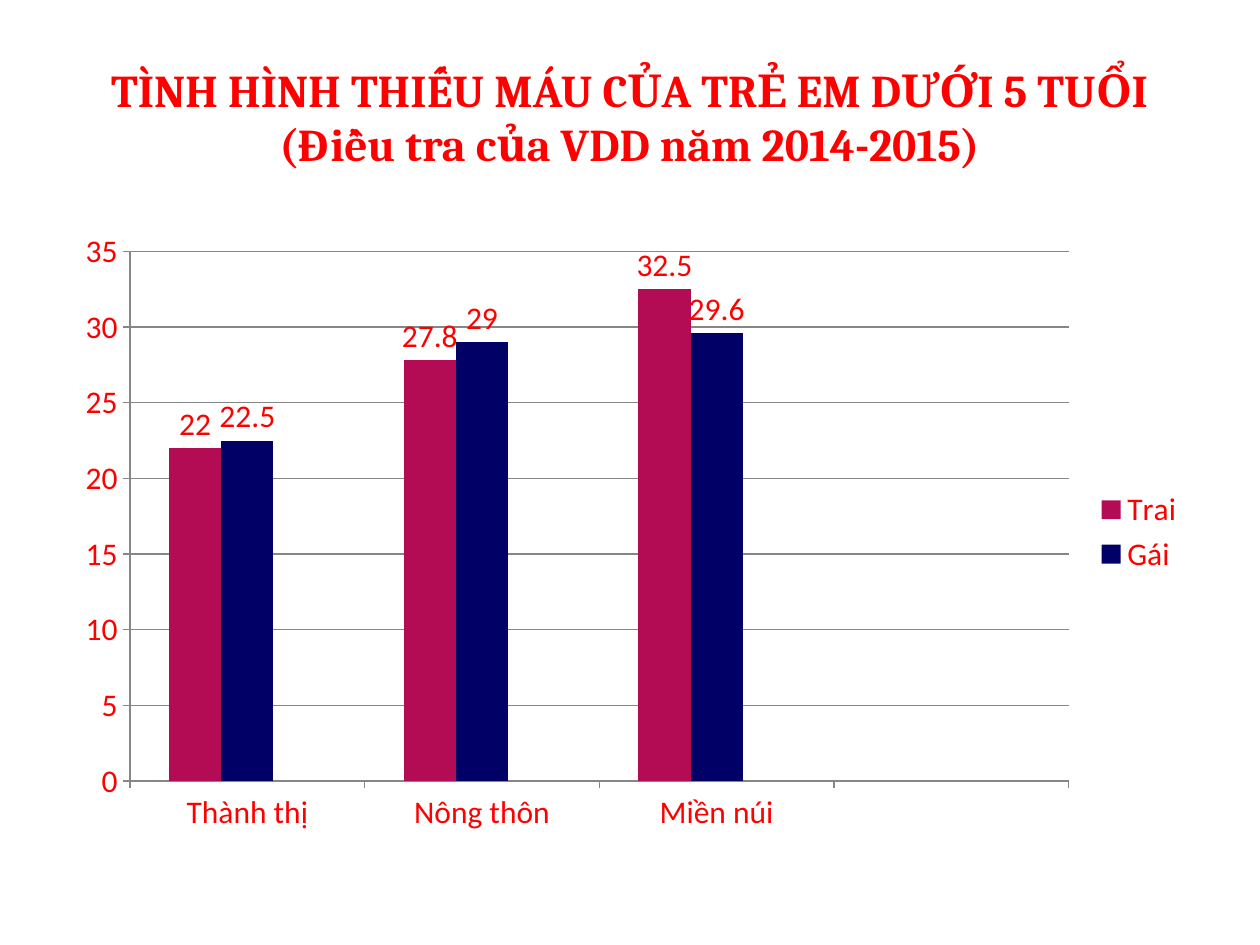
from lxml import etree
from pptx import Presentation
from pptx.chart.data import CategoryChartData
from pptx.dml.color import RGBColor
from pptx.enum.chart import (XL_CHART_TYPE, XL_LABEL_POSITION,
                             XL_LEGEND_POSITION, XL_TICK_MARK)
from pptx.enum.text import MSO_ANCHOR, PP_ALIGN
from pptx.oxml.ns import qn
from pptx.util import Emu, Pt

RED = RGBColor(0xFF, 0x00, 0x00)
CRIMSON = RGBColor(0xB4, 0x0C, 0x54)
NAVY = RGBColor(0x00, 0x00, 0x66)
GREEN = RGBColor(0x9B, 0xBB, 0x59)
GREY = RGBColor(0x86, 0x86, 0x86)
WHITE = RGBColor(0xFF, 0xFF, 0xFF)

TITLE_ONLY = 5
PX_PER_INCH = 126


def px(length):
    return Emu(round(length * 914400 / PX_PER_INCH))


def style_font(font, *, name, size, color, bold=False):
    font.name = name
    font.size = Pt(size)
    font.bold = bold
    font.color.rgb = color


def write_text(frame, text, *, align=PP_ALIGN.CENTER, **font_format):
    """Write one paragraph; newlines become line breaks."""
    para = frame.paragraphs[0]
    para.alignment = align
    for number, line in enumerate(text.split("\n")):
        if number:
            para.add_line_break()
        span = para.add_run()
        span.text = line
        style_font(span.font, **font_format)


class SlideBuilder:
    title_format = dict(name="Cambria", size=26, color=RED, bold=True)
    chart_format = dict(name="Calibri", size=18, color=RED)

    def __init__(self, deck):
        self.page = deck.slides.add_slide(deck.slide_layouts[TITLE_ONLY])
        self.page.background.fill.solid()
        self.page.background.fill.fore_color.rgb = WHITE

    def title(self, text, left, top, width, height):
        box = self.page.shapes.title
        box.left, box.top = px(left), px(top)
        box.width, box.height = px(width), px(height)
        box.text_frame.vertical_anchor = MSO_ANCHOR.MIDDLE
        write_text(box.text_frame, text, **self.title_format)

    def column_chart(self, categories, series, left, top, width, height):
        """Draw clustered columns; series holds (name, values, color)."""
        data = CategoryChartData()
        data.categories = categories
        for name, values, _ in series:
            data.add_series(name, values)
        chart = self.page.shapes.add_chart(
            XL_CHART_TYPE.COLUMN_CLUSTERED, px(left), px(top),
            px(width), px(height), data).chart
        chart.has_title = False
        style_font(chart.font, **self.chart_format)

        # Columns and their values
        plot = chart.plots[0]
        plot.gap_width, plot.overlap = 150, 0
        plot.vary_by_categories = False
        for column, (_, values, color) in zip(plot.series, series):
            column.format.fill.solid()
            column.format.fill.fore_color.rgb = color
            if any(value is not None for value in values):
                labels = column.data_labels
                labels.show_value = True
                labels.position = XL_LABEL_POSITION.OUTSIDE_END
                style_font(labels.font, **self.chart_format)

        # Axes and gridlines
        for axis in (chart.category_axis, chart.value_axis):
            axis.major_tick_mark = XL_TICK_MARK.OUTSIDE
            axis.minor_tick_mark = XL_TICK_MARK.NONE
            axis.format.line.color.rgb = GREY
            style_font(axis.tick_labels.font, **self.chart_format)
        scale = chart.value_axis
        scale.minimum_scale, scale.maximum_scale = 0, 35
        scale.major_unit = 5
        scale.has_major_gridlines = True
        scale.major_gridlines.format.line.color.rgb = GREY

        self.legend(chart, [number for number, (_, values, _) in enumerate(series)
                            if all(value is None for value in values)])

    def legend(self, chart, hidden):
        chart.has_legend = True
        legend = chart.legend
        legend.position = XL_LEGEND_POSITION.RIGHT
        legend.include_in_layout = False
        style_font(legend.font, **self.chart_format)
        position = chart.element.find(".//" + qn("c:legendPos"))
        for number in reversed(hidden):
            entry = etree.Element(qn("c:legendEntry"))
            etree.SubElement(entry, qn("c:idx")).set("val", str(number))
            etree.SubElement(entry, qn("c:delete")).set("val", "1")
            position.addnext(entry)


def main():
    deck = Presentation()
    deck.slide_width, deck.slide_height = px(1260), px(945)
    slide = SlideBuilder(deck)

    # Heading
    slide.title("TÌNH HÌNH THIẾU MÁU CỦA TRẺ EM DƯỚI 5 TUỔI\n"
                "(Điều tra của VDD năm 2014-2015)", 63, 38, 1134, 157)

    # Anaemia rates; the empty category and series keep the column spacing
    slide.column_chart(
        ["Thành thị", "Nông thôn", "Miền núi", ""],
        [("Trai", [22, 27.8, 32.5, None], CRIMSON),
         ("Gái", [22.5, 29, 29.6, None], NAVY),
         ("Series 3", [None] * 4, GREEN)],
        63, 220, 1134, 624)

    deck.save("out.pptx")


if __name__ == "__main__":
    main()
